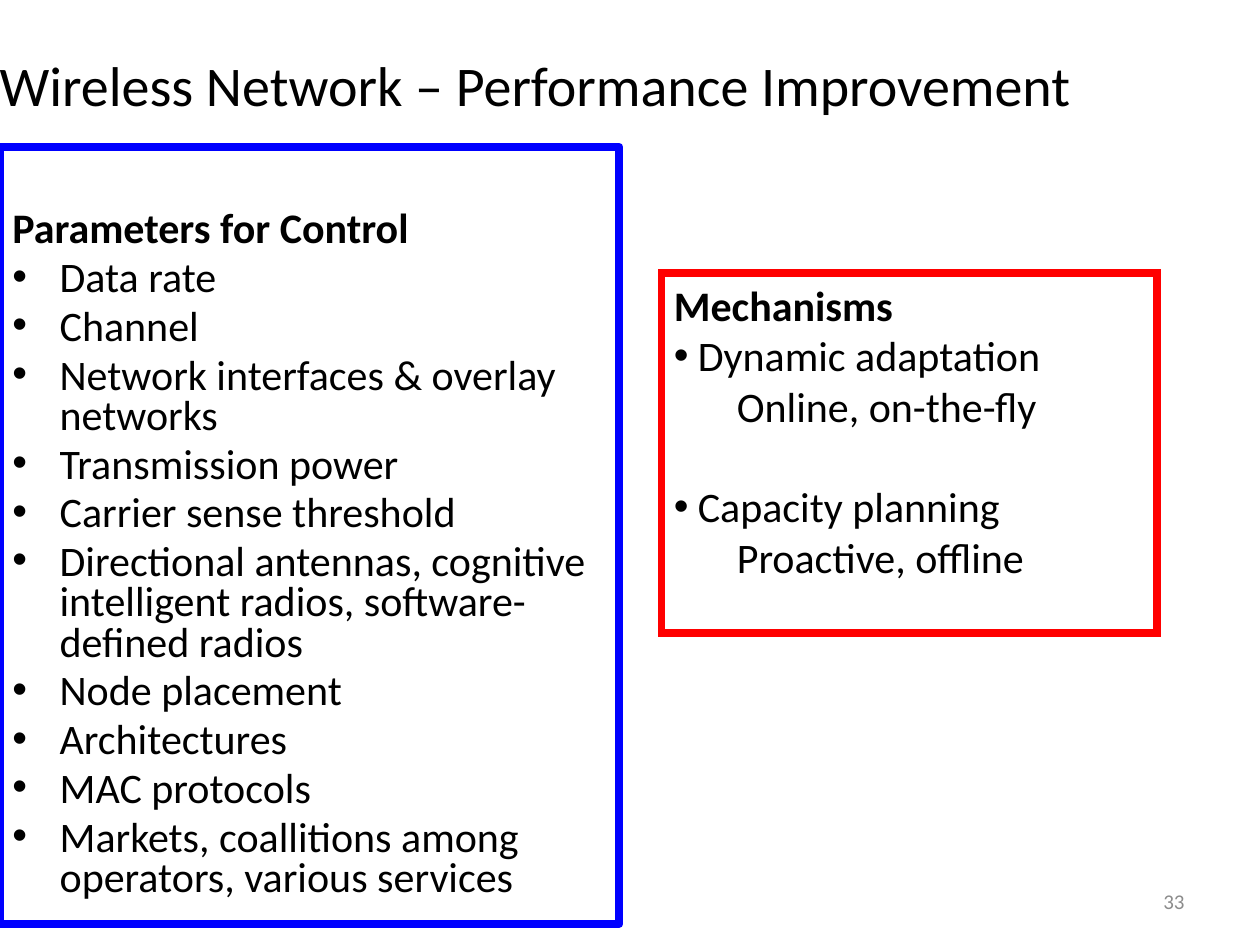
"""Build the slide on improving the performance of wireless networks."""
import pptx
import pptx.dml.color
import pptx.enum.shapes
import pptx.enum.text
import pptx.oxml.ns
import pptx.util
from lxml import etree

Pt = pptx.util.Pt
qn = pptx.oxml.ns.qn
ALIGN = pptx.enum.text.PP_ALIGN
ANCHOR = pptx.enum.text.MSO_ANCHOR

COLORS = {"text": "000000", "number": "8C8C8C", "parameters": "0000FF", "mechanisms": "FF0000"}
FONT = "Calibri"
BODY_SIZE = 24
GROUP_GAP = 28.8

TITLE = "Wireless Network – Performance Improvement"
PAGE_NUMBER = "33"
PARAMETERS = [
    "Data rate",
    "Channel",
    "Network interfaces & overlay networks",
    "Transmission power",
    "Carrier sense threshold",
    "Directional antennas, cognitive intelligent radios, software-defined radios",
    "Node placement",
    "Architectures",
    "MAC protocols",
    "Markets, coallitions among operators, various services",
]
MECHANISMS = [
    ("Dynamic adaptation", "Online, on-the-fly"),
    ("Capacity planning", "Proactive, offline"),
]


def rgb(name):
    return pptx.dml.color.RGBColor.from_string(COLORS[name])


def write(paragraph, text, size=BODY_SIZE, color="text", bold=False):
    paragraph.text = text
    font = paragraph.runs[0].font
    font.name, font.size, font.bold = FONT, Pt(size), bold
    font.color.rgb = rgb(color)


def indent(paragraph, left, hanging=0, bullet=False):
    properties = paragraph._p.get_or_add_pPr()
    properties.set("marL", str(Pt(left)))
    properties.set("indent", str(-Pt(hanging)))
    if bullet:
        etree.SubElement(properties, qn("a:buFont")).set("typeface", "Arial")
        etree.SubElement(properties, qn("a:buChar")).set("char", "•")


def add_label(slide, text, box, size, color, align):
    frame = slide.shapes.add_textbox(*map(Pt, box)).text_frame
    frame.word_wrap = True
    frame.vertical_anchor = ANCHOR.MIDDLE
    write(frame.paragraphs[0], text, size, color)
    frame.paragraphs[0].alignment = align


def add_panel(slide, heading, box, outline, corner, top_margin):
    panel = slide.shapes.add_shape(pptx.enum.shapes.MSO_SHAPE.RECTANGLE, *map(Pt, box))
    panel.shadow.inherit = False
    panel.fill.background()
    panel.line.color.rgb = rgb(outline)
    panel.line.width = Pt(4.5)
    etree.SubElement(panel.line._get_or_add_ln(), qn(corner))
    frame = panel.text_frame
    frame.word_wrap = True
    frame.vertical_anchor = ANCHOR.TOP
    frame.margin_top = Pt(top_margin)
    write(frame.paragraphs[0], heading, bold=True)
    return frame


def main():
    deck = pptx.Presentation()
    deck.slide_width, deck.slide_height = Pt(720), Pt(540)
    slide = deck.slides.add_slide(deck.slide_layouts[6])

    add_label(slide, PAGE_NUMBER, (516, 500.5, 168, 28.8), 12, "number", ALIGN.RIGHT)
    add_label(slide, TITLE, (-54, 0, 720, 96), 32, "text", ALIGN.CENTER)

    parameters = add_panel(
        slide, "Parameters for Control", (0, 84, 354, 444), "parameters", "a:round", 37)
    for parameter in PARAMETERS:
        write(parameters.add_paragraph(), parameter)
    for position, paragraph in enumerate(parameters.paragraphs):
        paragraph.alignment = ALIGN.LEFT
        paragraph.line_spacing = 0.8
        paragraph.space_before = Pt(4.8)
        indent(paragraph, 27, 27, bullet=position > 0)

    mechanisms = add_panel(
        slide, "Mechanisms", (378, 156, 283, 206), "mechanisms", "a:miter", 3.6)
    for position, (mechanism, manner) in enumerate(MECHANISMS):
        paragraph = mechanisms.add_paragraph()
        write(paragraph, mechanism)
        paragraph.space_before = Pt(position * GROUP_GAP)
        indent(paragraph, 13.7, 13.7, bullet=True)
        paragraph = mechanisms.add_paragraph()
        write(paragraph, manner)
        indent(paragraph, 36)
    for paragraph in mechanisms.paragraphs:
        paragraph.alignment = ALIGN.LEFT

    deck.save("out.pptx")


if __name__ == "__main__":
    main()
